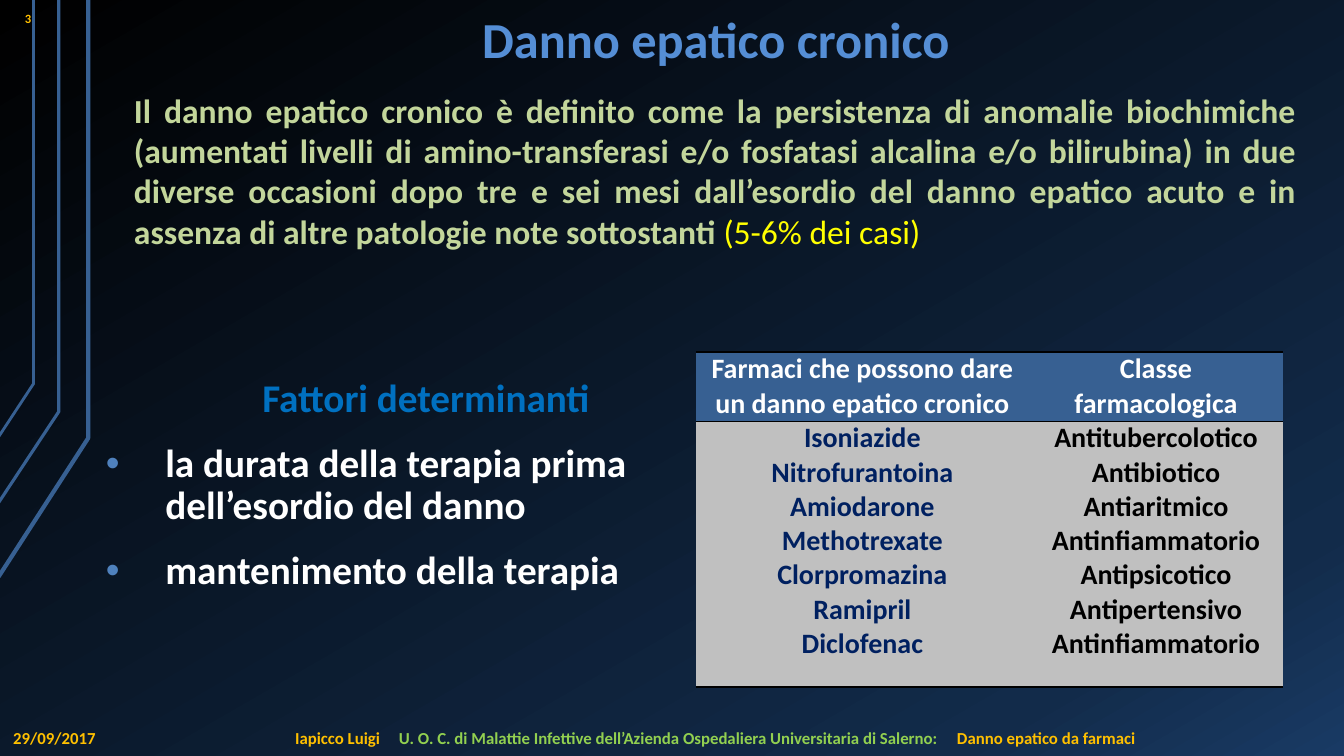
from copy import deepcopy

from lxml import etree
from pptx import Presentation
from pptx.dml.color import RGBColor
from pptx.enum import text
from pptx.oxml import ns
from pptx.util import Pt

COLORS = {
    "black": "000000", "night": "122B4A", "navy": "193A64", "steel": "376092",
    "title": "558ED5", "amber": "FFC000", "heading": "0070C0", "bullet": "4F81BD",
    "white": "FFFFFF", "sage": "C3D69B", "yellow": "FFFF00", "lime": "92D050",
    "drug": "002060", "silver": "C0C0C0",
}
ALIGN = text.PP_ALIGN
ANCHOR = text.MSO_ANCHOR

TRACES = [
    (3, [(-0.7, 411.8), (63.4, 313.2), (63.4, 0)]),
    (2.25, [(-1.4, 359.3), (41.8, 293.8), (41.8, 0)]),
    (2, [(-0.7, 312.5), (24.5, 274.3), (24.5, 0)]),
]
DEFINITION = (
    "Il danno epatico cronico è definito come la persistenza di anomalie biochimiche "
    "(aumentati livelli di amino-transferasi e/o fosfatasi alcalina e/o bilirubina) in due "
    "diverse occasioni dopo tre e sei mesi dall’esordio del danno epatico acuto e in "
    "assenza di altre patologie note sottostanti "
)
FACTORS = [
    "la durata della terapia prima dell’esordio del danno",
    "mantenimento della terapia",
]
HEADERS = ["Farmaci che possono dare un danno epatico cronico", "Classe farmacologica"]
DRUGS = [
    ("Isoniazide", "Antitubercolotico"),
    ("Nitrofurantoina", "Antibiotico"),
    ("Amiodarone", "Antiaritmico"),
    ("Methotrexate", "Antinfiammatorio"),
    ("Clorpromazina", "Antipsicotico"),
    ("Ramipril", "Antipertensivo"),
    ("Diclofenac", "Antinfiammatorio"),
]


def rgb(name):
    return RGBColor.from_string(COLORS[name])


def add_element(parent, tag, **attributes):
    element = etree.SubElement(parent, ns.qn(tag))
    for key, value in attributes.items():
        element.set(key, str(value))
    return element


def write(paragraph, content, size=12, color="white", bold=True, align=None,
          line_spacing=None, space_before=None):
    if align is not None:
        paragraph.alignment = align
    if line_spacing is not None:
        paragraph.line_spacing = line_spacing
    if space_before is not None:
        paragraph.space_before = Pt(space_before)
    run = paragraph.add_run()
    run.text = content
    run.font.name = "Calibri"
    run.font.size = Pt(size)
    run.font.bold = bold
    run.font.color.rgb = rgb(color)


def place(shape, box):
    shape.left, shape.top, shape.width, shape.height = [Pt(value) for value in box]


def prepare_frame(shape, anchor=ANCHOR.MIDDLE, insets=(9.4, 5)):
    frame = shape.text_frame
    frame.word_wrap = True
    frame.auto_size = text.MSO_AUTO_SIZE.NONE
    frame.vertical_anchor = anchor
    frame.margin_left = frame.margin_right = Pt(insets[0])
    frame.margin_top = frame.margin_bottom = Pt(insets[1])
    return frame


def add_label(slide, box, **options):
    shape = slide.shapes.add_textbox(*[Pt(value) for value in box])
    return prepare_frame(shape, **options)


def paint_background(slide):
    fill = slide.background.fill
    fill.gradient()
    fill.gradient_angle = 300
    stop_list = slide.element.find(".//" + ns.qn("a:gsLst"))
    stop_list.append(deepcopy(stop_list[-1]))
    stops = [(0, "black"), (0.85, "night"), (1, "navy")]
    for stop, (position, color) in zip(fill.gradient_stops, stops):
        stop.position = position
        stop.color.rgb = rgb(color)


def add_traces(slide):
    for width, points in TRACES:
        builder = slide.shapes.build_freeform(*points[0], scale=Pt(1))
        builder.add_line_segments(points[1:], close=False)
        trace = builder.convert_to_shape()
        trace.shadow.inherit = False
        trace.fill.background()
        trace.line.color.rgb = rgb("steel")
        trace.line.width = Pt(width)


def add_title(slide, box):
    title = slide.shapes.title
    place(title, box)
    frame = prepare_frame(title)
    write(frame.paragraphs[0], "Danno epatico cronico", size=36, color="title",
          align=ALIGN.CENTER, line_spacing=0.9)


def add_definition(slide, box):
    frame = add_label(slide, box, anchor=ANCHOR.TOP, insets=(7.2, 3.6))
    paragraph = frame.paragraphs[0]
    write(paragraph, DEFINITION, size=24, color="sage", align=ALIGN.JUSTIFY)
    write(paragraph, "(5-6% dei casi)", size=24, color="yellow", bold=False)


def add_factors(slide, box):
    body = slide.placeholders[1]
    place(body, box)
    frame = prepare_frame(body, anchor=ANCHOR.TOP)
    heading = frame.paragraphs[0]
    properties = heading._p.get_or_add_pPr()
    properties.set("marL", "0")
    properties.set("indent", "0")
    add_element(properties, "a:buNone")
    write(heading, "Fattori determinanti", size=28, color="heading",
          align=ALIGN.CENTER, line_spacing=0.9, space_before=0)
    for factor in FACTORS:
        paragraph = frame.add_paragraph()
        properties = paragraph._p.get_or_add_pPr()
        properties.set("marL", str(Pt(42.5)))
        properties.set("indent", str(-Pt(42.5)))
        bullet_color = add_element(properties, "a:buClr")
        add_element(bullet_color, "a:srgbClr", val=COLORS["bullet"])
        add_element(properties, "a:buFont", typeface="Arial")
        add_element(properties, "a:buChar", char="•")
        write(paragraph, factor, size=28, align=ALIGN.LEFT,
              line_spacing=0.9, space_before=16)


def format_cell(cell, fill, lines, color, anchor):
    properties = cell._tc.get_or_add_tcPr()
    for side in ("a:lnL", "a:lnR"):
        add_element(add_element(properties, side, w=0), "a:noFill")
    for side in ("a:lnT", "a:lnB"):
        border = add_element(properties, side, w=Pt(1))
        add_element(add_element(border, "a:solidFill"), "a:srgbClr", val=COLORS["black"])
    cell.fill.solid()
    cell.fill.fore_color.rgb = rgb(fill)
    cell.vertical_anchor = anchor
    cell.margin_left = cell.margin_right = Pt(5.4)
    cell.margin_top = cell.margin_bottom = 0
    for index, line in enumerate(lines):
        frame = cell.text_frame
        paragraph = frame.add_paragraph() if index else frame.paragraphs[0]
        write(paragraph, line, size=20, color=color, align=ALIGN.CENTER)


def add_drug_table(slide, box):
    header_height = 49.4
    frame = slide.shapes.add_table(2, 2, *[Pt(value) for value in box])
    table = frame.table
    table.rows[0].height = Pt(header_height)
    table.rows[1].height = Pt(box[3] - header_height)
    table.columns[0].width = Pt(238)
    table.columns[1].width = Pt(box[2] - 238)
    for column, (header, color) in enumerate(zip(HEADERS, ("drug", "black"))):
        names = [row[column] for row in DRUGS]
        format_cell(table.cell(0, column), "steel", [header], "white", ANCHOR.MIDDLE)
        format_cell(table.cell(1, column), "silver", names, color, ANCHOR.TOP)


def add_footer(slide, box):
    left, top, width, height = box
    date = add_label(slide, (left, top, 83, height))
    write(date.paragraphs[0], "29/09/2017", color="amber")
    credits_left = left + 201.4
    frame = add_label(slide, (credits_left, top, width - credits_left, height))
    paragraph = frame.paragraphs[0]
    tabs = add_element(paragraph._p.get_or_add_pPr(), "a:tabLst")
    for position in (74.2, 472.8):
        add_element(tabs, "a:tab", pos=Pt(position), algn="l")
    write(paragraph, "Iapicco Luigi\t", color="amber")
    write(paragraph, "U. O. C. di Malattie Infettive dell’Azienda Ospedaliera "
          "Universitaria di Salerno:\t", color="lime")
    write(paragraph, "Danno epatico da farmaci", color="amber")


def add_slide_number(slide, box):
    frame = add_label(slide, box)
    write(frame.paragraphs[0], "3", size=9, color="amber", align=ALIGN.RIGHT)


def main():
    presentation = Presentation()
    presentation.slide_width = Pt(960)
    presentation.slide_height = Pt(540)
    slide = presentation.slides.add_slide(presentation.slide_layouts[1])
    paint_background(slide)
    add_traces(slide)
    add_title(slide, (72, 0, 879, 60.5))
    add_slide_number(slide, (0, 0, 31.7, 26))
    add_factors(slide, (66.2, 265.7, 476, 169))
    add_definition(slide, (88.6, 60.5, 844.5, 124))
    add_drug_table(slide, (497, 251.4, 419.5, 239.4))
    add_footer(slide, (0, 514, 960, 26))
    presentation.save("out.pptx")


if __name__ == "__main__":
    main()
